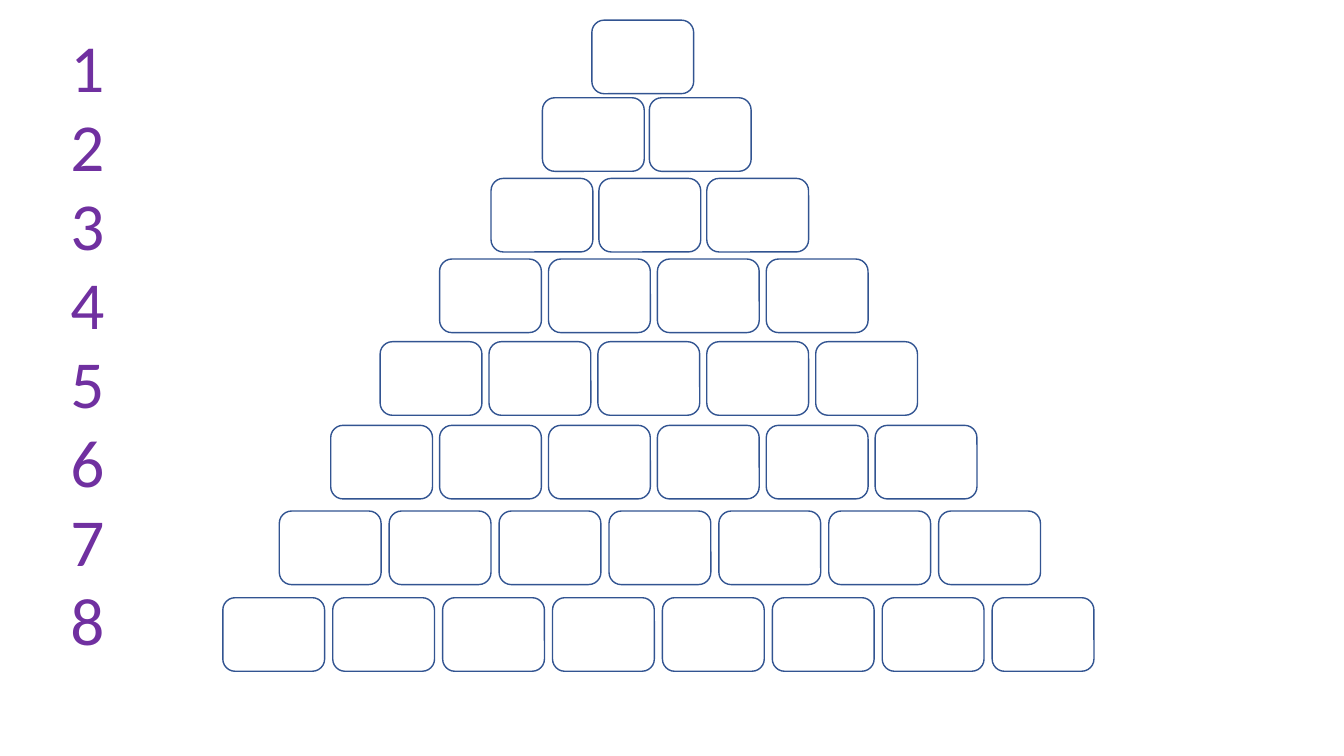
from typing import NamedTuple

from pptx import Presentation
from pptx.dml.color import RGBColor
from pptx.enum.shapes import MSO_SHAPE
from pptx.enum.text import PP_ALIGN
from pptx.slide import Slide
from pptx.util import Inches, Pt

BRICK_WIDTH, BRICK_HEIGHT = 1.01, 0.73
OUTLINE = "325491"
PURPLE = "7030A0"


class BrickRow(NamedTuple):
    """One pyramid row: its top, first brick's left and step between bricks."""
    top: float
    left: float
    step: float


PYRAMID = [
    BrickRow(0.2, 5.87, 0),
    BrickRow(0.97, 5.38, 1.06),
    BrickRow(1.77, 4.87, 1.07),
    BrickRow(2.57, 4.36, 1.08),
    BrickRow(3.39, 3.77, 1.08),
    BrickRow(4.22, 3.28, 1.08),
    BrickRow(5.07, 2.77, 1.09),
    BrickRow(5.93, 2.21, 1.09),
]


def color(code: str) -> RGBColor:
    return RGBColor.from_string(code)


def add_brick(slide: Slide, left: float, top: float) -> None:
    brick = slide.shapes.add_shape(
        MSO_SHAPE.ROUNDED_RECTANGLE, Inches(left), Inches(top),
        Inches(BRICK_WIDTH), Inches(BRICK_HEIGHT))
    brick.shadow.inherit = False
    brick.fill.background()
    brick.line.color.rgb = color(OUTLINE)
    brick.line.width = Pt(1)


def add_row_numbers(slide: Slide, count: int) -> None:
    numbers = slide.shapes.add_textbox(
        Inches(0.6), Inches(0.24), Inches(1.41), Inches(6.6)).text_frame
    numbers.word_wrap = True
    numbers.text = "\n".join(str(number) for number in range(1, count + 1))
    for paragraph in numbers.paragraphs:
        paragraph.alignment = PP_ALIGN.LEFT
        paragraph.line_spacing = 0.98
        paragraph.font.name = "Calibri"
        paragraph.font.size = Pt(48)
        paragraph.font.color.rgb = color(PURPLE)


def main() -> None:
    presentation = Presentation()
    presentation.slide_width = Inches(13.33)
    presentation.slide_height = Inches(7.5)
    slide = presentation.slides.add_slide(presentation.slide_layouts[6])
    for brick_count, row in enumerate(PYRAMID, start=1):
        for position in range(brick_count):
            add_brick(slide, row.left + position * row.step, row.top)
    add_row_numbers(slide, len(PYRAMID))
    presentation.save("out.pptx")


if __name__ == "__main__":
    main()
